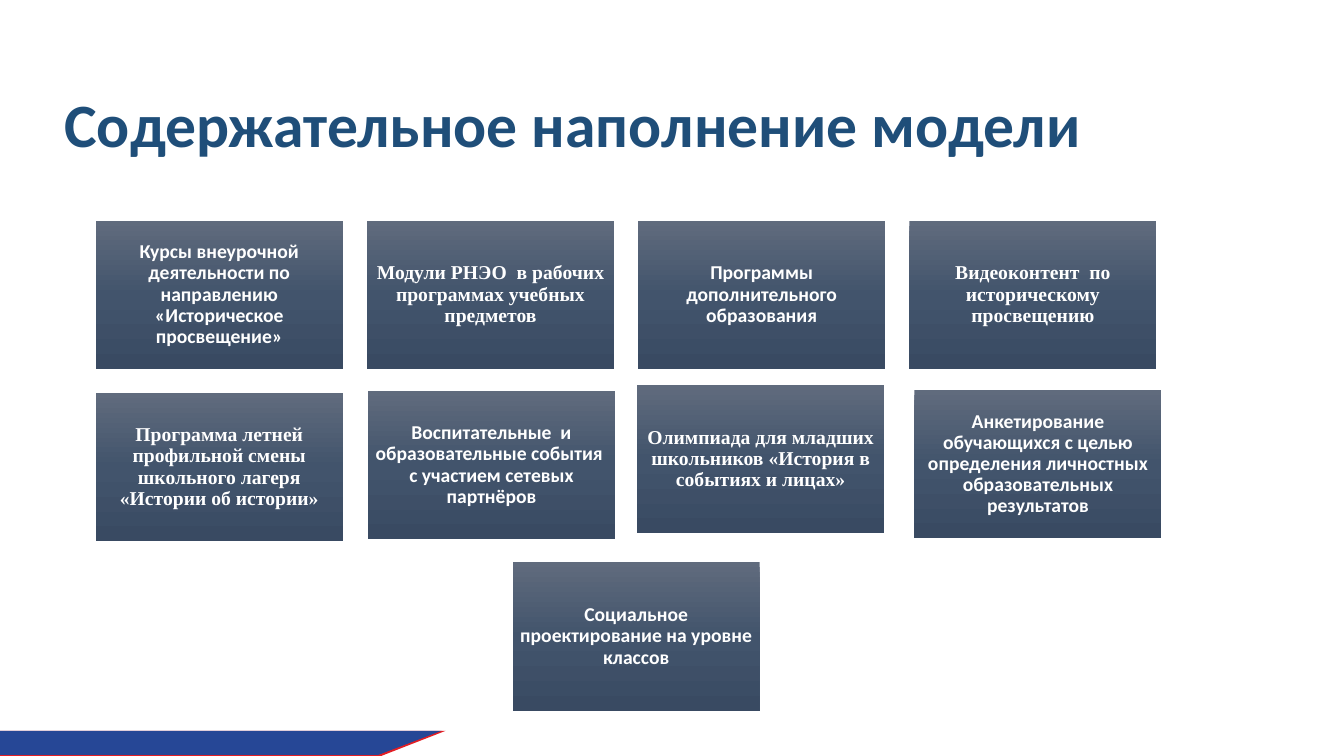
import copy
import pptx
import pptx.util
import pptx.dml.color
import pptx.enum.shapes
import pptx.enum.text

Inches, Pt = pptx.util.Inches, pptx.util.Pt
RGB = pptx.dml.color.RGBColor
ALIGN = pptx.enum.text.PP_ALIGN

RED = RGB(0xE3, 0x1E, 0x24)
BLUE = RGB(0x26, 0x47, 0x96)
TITLE = RGB(0x1F, 0x4E, 0x79)
WHITE = RGB(0xFF, 0xFF, 0xFF)
GRADIENT = [(0, RGB(0x60, 0x6B, 0x7D)), (0.5, RGB(0x42, 0x54, 0x6C)),
            (1, RGB(0x39, 0x4A, 0x62))]
SANS, SERIF = "Calibri", "Times New Roman"

prs = pptx.Presentation()
prs.slide_width, prs.slide_height = Inches(13.33), Inches(7.5)
s = prs.slides.add_slide(prs.slide_layouts[6])


def write(sp, text, align, inset, font):
    tf = sp.text_frame
    tf.word_wrap = True
    tf.vertical_anchor = pptx.enum.text.MSO_ANCHOR.MIDDLE
    for side, width in zip(("left", "right", "top", "bottom"), inset):
        setattr(tf, "margin_" + side, Inches(width))
    p = tf.paragraphs[0]
    p.alignment, p.line_spacing = align, 0.9
    r = p.add_run()
    r.text = text
    r.font.color.rgb = font["color"]
    for key in ("name", "size", "bold"):
        setattr(r.font, key, font[key])


# Footer band: blue over a slightly larger red one
for color, top_right, bottom_right, bottom in [(RED, 4.42, 3.78, 7.5),
                                               (BLUE, 4.38, 3.75, 7.49)]:
    fb = s.shapes.build_freeform(0, Inches(7.25))
    fb.add_line_segments([(Inches(x), Inches(y)) for x, y in
                          [(top_right, 7.25), (bottom_right, bottom), (0, bottom)]])
    sp = fb.convert_to_shape()
    sp.shadow.inherit = False
    sp.fill.solid()
    sp.fill.fore_color.rgb = color
    sp.line.fill.background()

# Title
sp = s.shapes.add_textbox(Inches(0.54), Inches(0.54), Inches(11.34), Inches(1.45))
write(sp, "Содержательное наполнение модели", ALIGN.LEFT, (0.1, 0.1, 0.05, 0.05),
      {"name": SANS, "size": Pt(44), "bold": True, "color": TITLE})

# Cards: column, row, nudge right, nudge down, font, text
LEFT, TOP, WIDTH, HEIGHT = 0.95, 2.19, 2.45, 1.47
COL_STEP, ROW_STEP = 2.69, 1.71
cards = [
    (0, 0, 0, 0, SANS, "Курсы внеурочной деятельности по направлению «Историческое просвещение»"),
    (1, 0, 0, 0, SERIF, "Модули РНЭО  в рабочих программах учебных предметов"),
    (2, 0, 0, 0, SANS, "Программы дополнительного образования"),
    (3, 0, 0, 0, SERIF, "Видеоконтент  по историческому просвещению"),
    (0, 1, 0, 0, SERIF, "Программа летней профильной смены школьного лагеря «Истории об истории»"),
    (1, 1, 0.01, -0.02, SANS,
     "Воспитательные  и образовательные события  с участием сетевых партнёров"),
    (2, 1, -0.01, -0.08, SERIF, "Олимпиада для младших школьников «История в событиях и лицах»"),
    (3, 1, 0.05, -0.03, SANS,
     "Анкетирование обучающихся с целью определения личностных образовательных результатов"),
    (1.5, 2, 0.1, -0.03, SANS, "Социальное проектирование на уровне классов"),
]
for col, row, dx, dy, font_name, text in cards:
    sp = s.shapes.add_shape(pptx.enum.shapes.MSO_SHAPE.RECTANGLE,
                            Inches(LEFT + col * COL_STEP + dx),
                            Inches(TOP + row * ROW_STEP + dy),
                            Inches(WIDTH), Inches(HEIGHT))
    sp.shadow.inherit = False
    sp.line.fill.background()
    sp.fill.gradient()
    sp.fill.gradient_angle = 270
    # The preset gradient has two stops; add the middle one
    first = sp.element.spPr.xpath(".//a:gs")[0]
    first.addnext(copy.deepcopy(first))
    for stop, (position, color) in zip(sp.fill.gradient_stops, GRADIENT):
        stop.position, stop.color.rgb = position, color
    write(sp, text, ALIGN.CENTER, (0.06,) * 4,
          {"name": font_name, "size": Pt(14), "bold": True, "color": WHITE})

prs.save("out.pptx")
